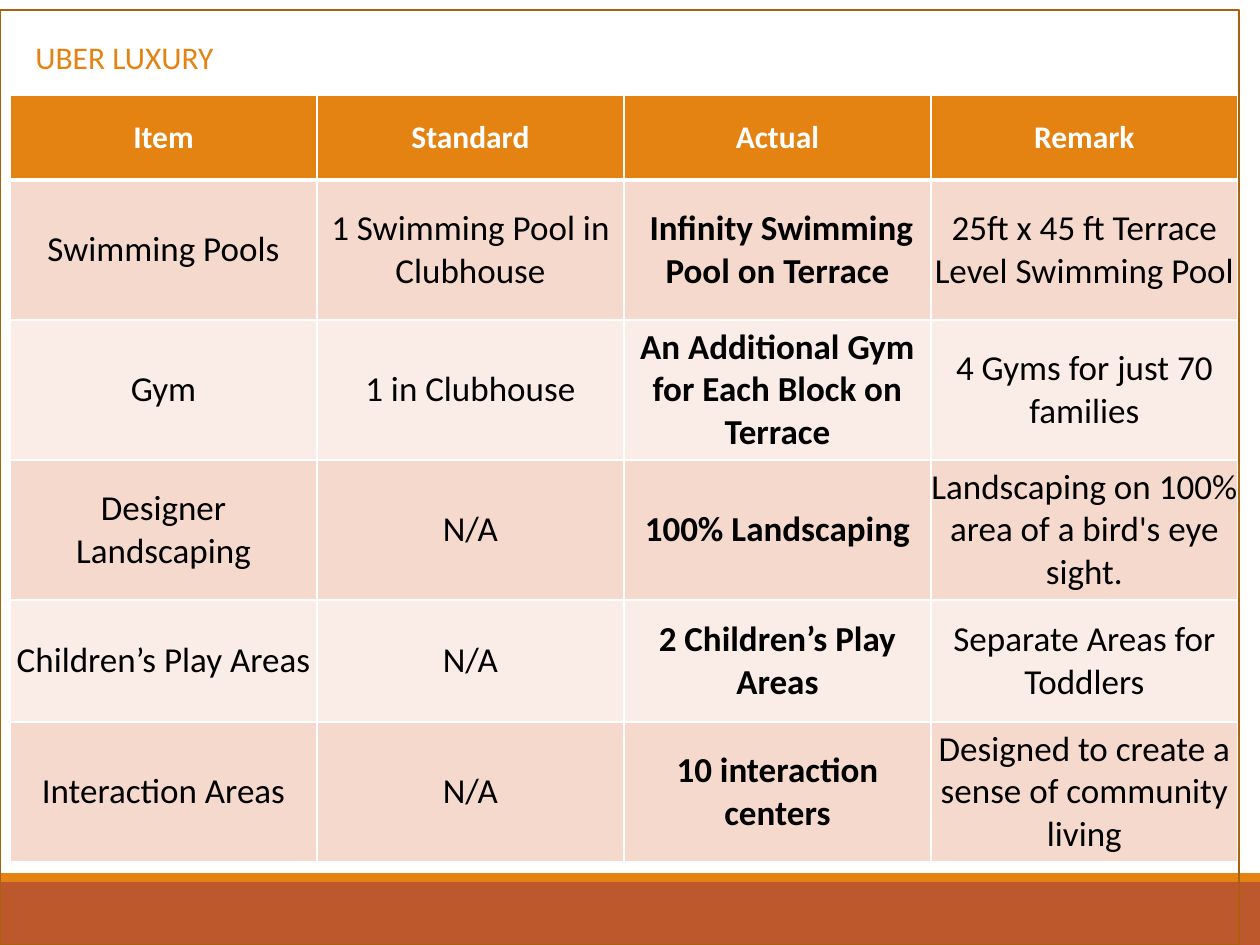
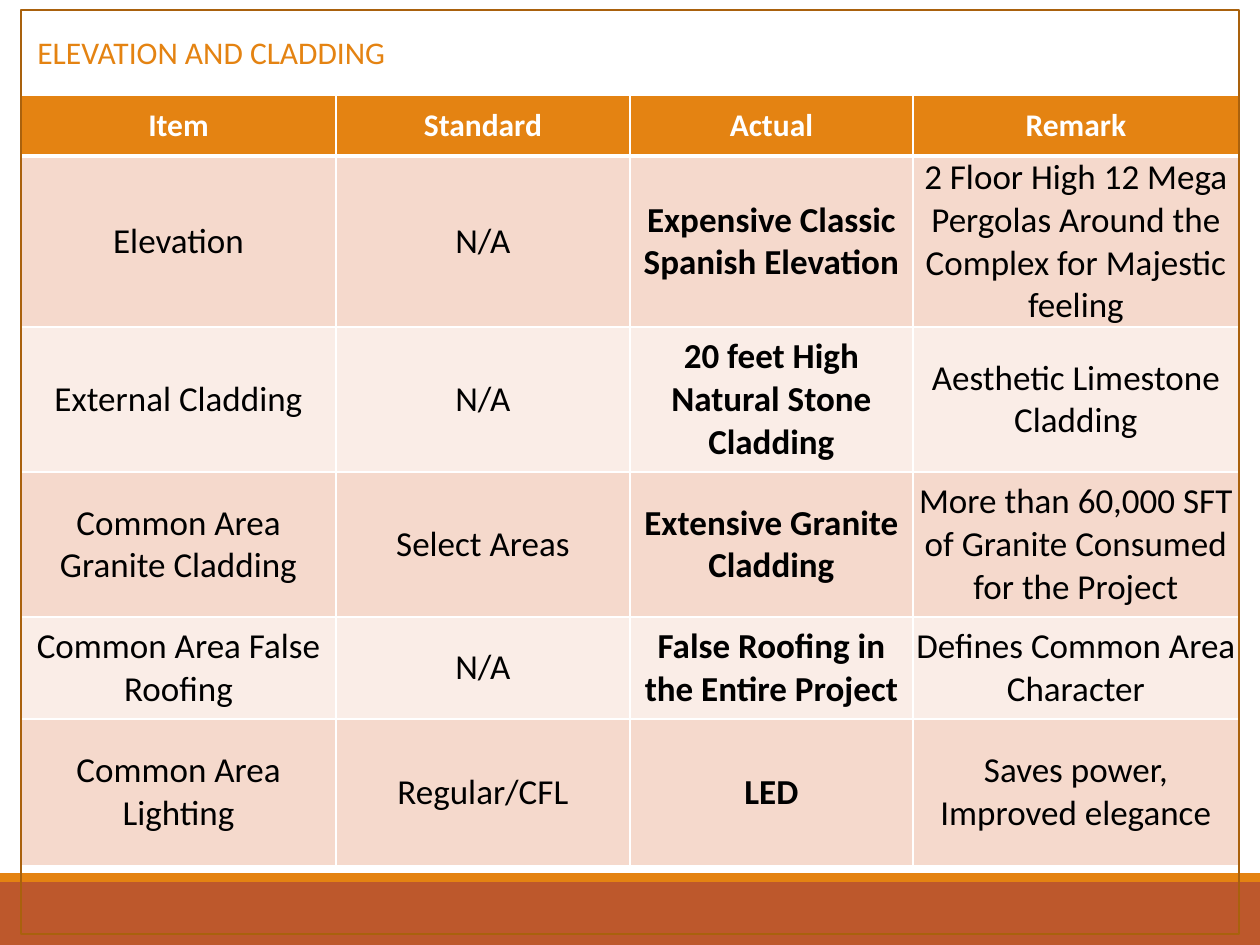
from lxml.etree import SubElement
from pptx import Presentation
from pptx.dml.color import RGBColor
from pptx.enum.shapes import MSO_SHAPE as Shape
from pptx.enum.text import MSO_ANCHOR as Anchor, MSO_AUTO_SIZE as Auto, PP_ALIGN as Align
from pptx.oxml.ns import qn
from pptx.util import Pt

WHITE = RGBColor(0xFF, 0xFF, 0xFF)
BLACK = RGBColor(0, 0, 0)
ORANGE = RGBColor(0xE4, 0x83, 0x12)
RUST = RGBColor(0xBD, 0x58, 0x2C)
BROWN = RGBColor(0xA9, 0x61, 0x0D)
TINTS = RGBColor(0xF5, 0xD9, 0xCC), RGBColor(0xFA, 0xED, 0xE7)
FONT = "Calibri"
WIDE, HIGH = 1260, 945
BANDS = [(882, 63, RUST), (873, 9, ORANGE)]
HEAD = ["Item", "Standard", "Actual", "Remark"]
BOLD = HEAD.index("Actual")
TOP = 95

PAGES = [
    {
        "title": "UBER LUXURY",
        "label": (23, 32, 205, 50),
        "frame": (0, 10, 1239, 935),
        "left": 10,
        "cols": [307] * 4,
        "rows": [85, 140, 140, 140, 122, 140],
        "body": [
            ["Swimming Pools", "1 Swimming Pool in Clubhouse",
             " Infinity Swimming Pool on Terrace",
             "25ft x 45 ft Terrace Level Swimming Pool"],
            ["Gym", "1 in Clubhouse",
             "An Additional Gym for Each Block on Terrace",
             "4 Gyms for just 70 families"],
            ["Designer Landscaping", "N/A", "100% Landscaping",
             "Landscaping on 100% area of a bird's eye sight."],
            ["Children’s Play Areas", "N/A", "2 Children’s Play Areas",
             "Separate Areas for Toddlers"],
            ["Interaction Areas", "N/A", "10 interaction centers",
             "Designed to create a sense of community living"],
        ],
    },
    {
        "title": "ELEVATION AND CLADDING",
        "label": (25, 27, 377, 50),
        "frame": (21, 10, 1218, 924),
        "left": 21,
        "cols": [315, 294, 283, 326],
        "rows": [61, 171, 145, 145, 102, 147],
        "body": [
            ["Elevation", "N/A", "Expensive Classic Spanish Elevation",
             "2 Floor High 12 Mega Pergolas Around the Complex for Majestic feeling"],
            ["External Cladding", "N/A", "20 feet High Natural Stone Cladding",
             "Aesthetic Limestone Cladding"],
            ["Common Area Granite Cladding", "Select Areas",
             "Extensive Granite Cladding",
             "More than 60,000 SFT of Granite Consumed for the Project"],
            ["Common Area False Roofing", "N/A",
             "False Roofing in the Entire Project",
             "Defines Common Area Character"],
            ["Common Area Lighting", "Regular/CFL", "LED",
             "Saves power, Improved elegance"],
        ],
    },
]


def px(n):
    return round(n * 914400 / 126)


def write(para, text, size, color, bold=False):
    run = para.add_run()
    run.text = text
    font = run.font
    font.name, font.size, font.bold = FONT, Pt(size), bold
    font.color.rgb = color


def rect(slide, box, fill=None, line=None):
    shape = slide.shapes.add_shape(Shape.RECTANGLE, *map(px, box))
    shape.shadow.inherit = False
    if fill is None:
        shape.fill.background()
    else:
        shape.fill.solid()
        shape.fill.fore_color.rgb = fill
    if line is None:
        shape.line.fill.background()
    else:
        shape.line.color.rgb = line
        shape.line.width = Pt(1.25)


def edge(cell, row):
    props = cell._tc.get_or_add_tcPr()
    wide = {"T": 3 if row == 1 else 1, "B": 3 if row == 0 else 1}
    for side in "LRTB":
        line = SubElement(props, qn("a:ln" + side), w=str(Pt(wide.get(side, 1))))
        fill = SubElement(line, qn("a:solidFill"))
        SubElement(fill, qn("a:srgbClr"), val=str(WHITE))


def style(cell, text, row, col):
    edge(cell, row)
    cell.fill.solid()
    cell.fill.fore_color.rgb = TINTS[(row - 1) % 2] if row else ORANGE
    cell.vertical_anchor = Anchor.MIDDLE
    if row:
        cell.margin_left = cell.margin_right = 0
        cell.margin_top = cell.margin_bottom = 0
    para = cell.text_frame.paragraphs[0]
    para.alignment = Align.CENTER
    if row:
        write(para, text, 20, BLACK, col == BOLD)
    else:
        write(para, text, 18, WHITE, True)


def grid(slide, page):
    cols, rows = page["cols"], page["rows"]
    box = page["left"], TOP, sum(cols), sum(rows)
    table = slide.shapes.add_table(len(rows), len(cols), *map(px, box)).table
    for col, wide in zip(table.columns, cols):
        col.width = px(wide)
    for row, high in zip(table.rows, rows):
        row.height = px(high)
    for r, line in enumerate([HEAD] + page["body"]):
        for c, text in enumerate(line):
            style(table.cell(r, c), text, r, c)


def label(slide, page):
    frame = slide.shapes.add_textbox(*map(px, page["label"])).text_frame
    frame.word_wrap = False
    frame.auto_size = Auto.SHAPE_TO_FIT_TEXT
    write(frame.paragraphs[0], page["title"], 18, ORANGE)


def main():
    deck = Presentation()
    deck.slide_width, deck.slide_height = px(WIDE), px(HIGH)
    for page in PAGES:
        slide = deck.slides.add_slide(deck.slide_layouts[6])
        for top, high, color in BANDS:
            rect(slide, (0, top, WIDE, high), fill=color)
        grid(slide, page)
        label(slide, page)
        rect(slide, page["frame"], line=BROWN)
    deck.save("out.pptx")


if __name__ == "__main__":
    main()
